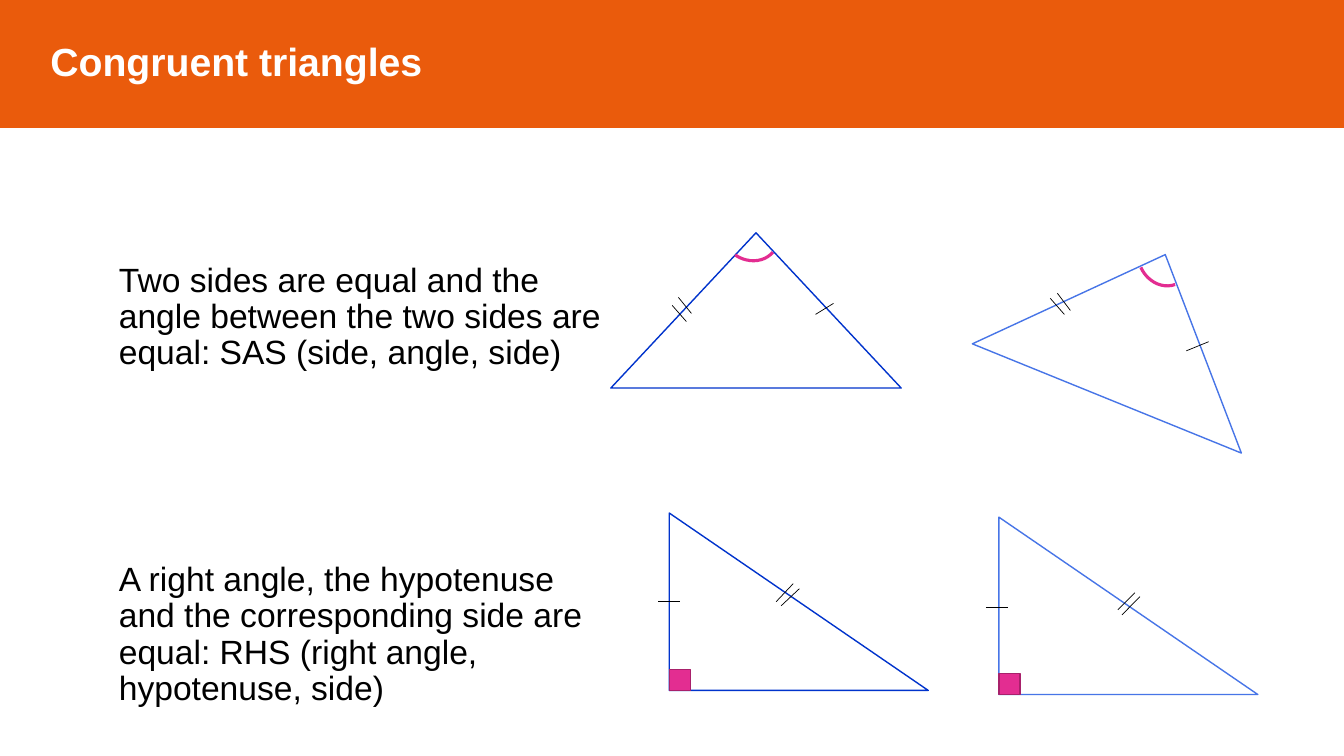
from lxml.etree import SubElement
from pptx import Presentation
from pptx.dml.color import RGBColor
from pptx.enum.shapes import MSO_CONNECTOR, MSO_SHAPE as SHAPE
from pptx.enum.text import MSO_ANCHOR, PP_ALIGN
from pptx.oxml.ns import qn
from pptx.util import Pt

ORANGE, PINK, DARK_PINK = "EA5B0C", "E32D91", "A8216B"
BLUE, LIGHT_BLUE, BLACK, WHITE = "0033CC", "4775E7", "000000", "FFFFFF"


def paint(color_format, color):
    """Set a fill's or font's colour from a hex string."""
    color_format.rgb = RGBColor.from_string(color)


def draw(kind, box, line, width=1, fill=None, rotation=0):
    """Add a preset shape without shadow; box is left, top, width, height."""
    shape = slide.shapes.add_shape(kind, *map(Pt, box))
    shape.shadow.inherit = False
    shape.rotation = rotation
    paint(shape.line.color, line)
    shape.line.width = Pt(width)
    if fill:
        shape.fill.solid()
        paint(shape.fill.fore_color, fill)
    else:
        shape.fill.background()
    return shape


deck = Presentation()
deck.slide_width, deck.slide_height = Pt(960), Pt(540)
slide = deck.slides.add_slide(deck.slide_layouts[6])

# Title banner
banner = draw(SHAPE.RECTANGLE, (0, -4.3, 960, 95), ORANGE, fill=ORANGE)
banner.text_frame.margin_left = Pt(36)
banner.text_frame.vertical_anchor = MSO_ANCHOR.MIDDLE
heading = banner.text_frame.paragraphs[0]
heading.text = "Congruent triangles"
heading.alignment = PP_ALIGN.LEFT
for attribute, value in {"name": "Arial", "size": Pt(28), "bold": True}.items():
    setattr(heading.font, attribute, value)
paint(heading.font.color, WHITE)

# Congruence conditions
conditions = [
    (184.3, 95.8, "Two sides are equal and the angle between the two sides are "
                  "equal: SAS (side, angle, side)"),
    (398.2, 113, "A right angle, the hypotenuse and the corresponding side are "
                 "equal: RHS (right angle, hypotenuse, side)"),
]
for top, height, wording in conditions:
    frame = slide.shapes.add_textbox(Pt(77.8), Pt(top), Pt(363.6), Pt(height)).text_frame
    frame.word_wrap = True
    condition = frame.paragraphs[0]
    condition.text = wording
    for attribute, value in {"line_spacing": 0.9, "space_before": Pt(10)}.items():
        setattr(condition, attribute, value)
    for attribute, value in {"name": "Arial", "size": Pt(24)}.items():
        setattr(condition.font, attribute, value)
    paint(condition.font.color, BLACK)

# SAS triangles with the angle between the equal sides
sas_pair = [
    ((707.8, 177.8), 22.1, LIGHT_BLUE, (812.9, 160.6), 160.5, 212.01),
    ((436.3, 166.3), 0, BLUE, (516.2, 144), 130.4, 211.1),
]
for corner, turn, color, arc_corner, arc_turn, arc_end in sas_pair:
    draw(SHAPE.ISOSCELES_TRIANGLE, (*corner, 207.4, 110.9), color, rotation=turn)
    angle = draw(SHAPE.ARC, (*arc_corner, 38.2, 43.9), PINK, 2.25, rotation=arc_turn)
    angle.adjustments[0] = 162
    angle.adjustments[1] = arc_end

# RHS triangles with their right angles
tri_height, mark = 126.7, 15.1
for left, top, color in [(478.1, 366.5, BLUE), (713.5, 369.4, LIGHT_BLUE)]:
    draw(SHAPE.RIGHT_TRIANGLE, (left, top, 185, tri_height), color)
    draw(SHAPE.RECTANGLE, (left, top + tri_height - mark, mark, mark), DARK_PINK, fill=PINK)

# Ticks on equal sides: x1, y1, x2, y2
ticks = [
    # SAS, double
    (480.2, 218.2, 490.3, 229.7), (484.6, 212.4, 493.9, 223.9),
    (750.2, 213.1, 760.3, 224.6), (755.3, 209.5, 764.6, 221.8),
    # SAS, single
    (595.4, 216.7, 582.5, 224.6), (847.4, 250.6, 863.3, 244.1),
    # RHS, single
    (470.2, 429.8, 486, 429.8), (704.2, 434.2, 720, 434.2),
    # RHS, double
    (566.6, 416.9, 554.4, 429.8), (571, 420.5, 558, 432.7),
    (810.7, 423.4, 798.5, 435.6), (814.3, 426.2, 801.4, 439.2),
]
for ends in ticks:
    tick = slide.shapes.add_connector(MSO_CONNECTOR.STRAIGHT, *map(Pt, ends))
    paint(tick.line.color, BLACK)
    tick.line.width = Pt(0.5)
    SubElement(tick._element.spPr, qn("a:effectLst"))

deck.save("out.pptx")
